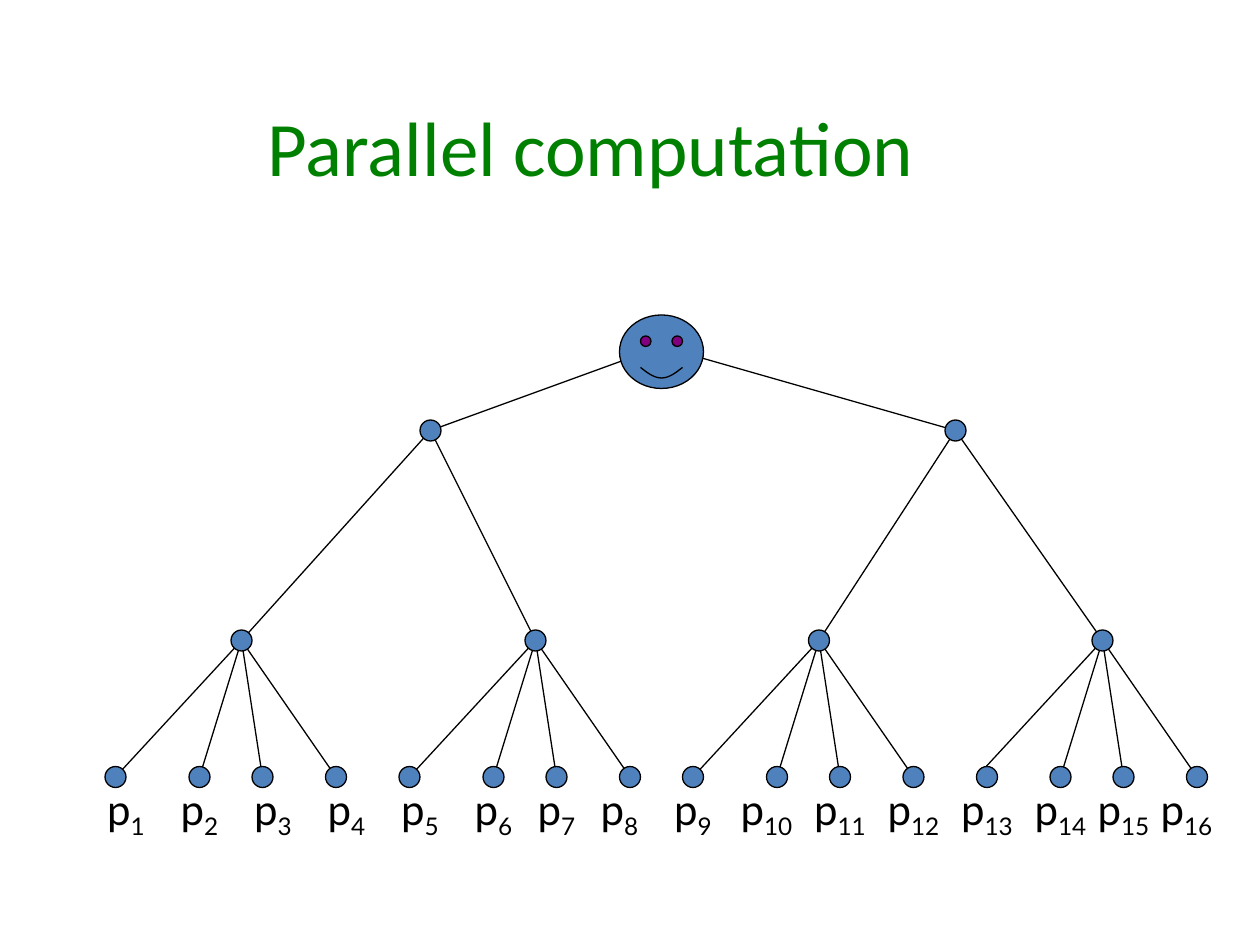
import math
from dataclasses import dataclass

import pptx
import pptx.dml.color
import pptx.enum.shapes
import pptx.enum.text
import pptx.util
from lxml import etree
from pptx.oxml.ns import qn

GRID = 2.54 / 12  # one grid step in cm; tree positions below are in steps


@dataclass(frozen=True)
class Theme:
    title_color: str = "008000"
    node_color: str = "4F81BD"
    eye_color: str = "800080"
    ink: str = "000000"
    title_font: str = "Calibri"
    label_font: str = "Lato"
    title_size: float = 44
    label_size: float = 24
    line_width: float = 0.75


def steps(count):
    return pptx.util.Cm(count * GRID)


def rgb(color):
    return pptx.dml.color.RGBColor.from_string(color)


class TreeSlide:
    def __init__(self, slide, theme):
        self.slide = slide
        self.theme = theme

    def style_run(self, run, font, size, color):
        run.font.name = font
        run.font.size = pptx.util.Pt(size)
        run.font.color.rgb = rgb(color)

    def outline(self, line):
        line.color.rgb = rgb(self.theme.ink)
        line.width = pptx.util.Pt(self.theme.line_width)

    def title(self, text, left, top, width, height):
        title = self.slide.shapes.title
        title.left, title.top = pptx.util.Cm(left), pptx.util.Cm(top)
        title.width, title.height = pptx.util.Cm(width), pptx.util.Cm(height)
        frame = title.text_frame
        frame.text = text
        frame.vertical_anchor = pptx.enum.text.MSO_ANCHOR.MIDDLE
        heading = frame.paragraphs[0]
        heading.alignment = pptx.enum.text.PP_ALIGN.CENTER
        self.style_run(heading.runs[0], self.theme.title_font,
                       self.theme.title_size, self.theme.title_color)

    def label(self, letter, index, center, top):
        width = 6.1 if index < 10 else 7.5
        box = self.slide.shapes.add_textbox(
            steps(center - width / 2), steps(top), steps(width), steps(6))
        frame = box.text_frame
        frame.word_wrap = False
        frame.auto_size = pptx.enum.text.MSO_AUTO_SIZE.SHAPE_TO_FIT_TEXT
        paragraph = frame.paragraphs[0]
        paragraph.text = letter
        paragraph.alignment = pptx.enum.text.PP_ALIGN.CENTER
        subscript = paragraph.add_run()
        subscript.text = str(index)
        for run in paragraph.runs:
            self.style_run(run, self.theme.label_font,
                           self.theme.label_size, self.theme.ink)
        subscript.font._element.set("baseline", "-25000")

    def edge(self, start, end):
        edge = self.slide.shapes.add_connector(
            pptx.enum.shapes.MSO_CONNECTOR.STRAIGHT,
            *(steps(value) for value in (*start, *end)))
        self.outline(edge.line)
        etree.SubElement(edge._element.spPr, qn("a:effectLst"))

    def circle(self, center, width, height, color):
        x, y = center
        circle = self.slide.shapes.add_shape(
            pptx.enum.shapes.MSO_SHAPE.OVAL, steps(x - width / 2),
            steps(y - height / 2), steps(width), steps(height))
        circle.shadow.inherit = False
        circle.fill.solid()
        circle.fill.fore_color.rgb = rgb(color)
        self.outline(circle.line)

    def smile(self, left, top, width, depth, pieces=24):
        curve = [(steps(left + width * i / pieces),
                  steps(top + depth * math.sin(math.pi * i / pieces)))
                 for i in range(pieces + 1)]
        builder = self.slide.shapes.build_freeform(*curve[0], scale=1.0)
        builder.add_line_segments(curve[1:], close=False)
        smile = builder.convert_to_shape()
        smile.shadow.inherit = False
        smile.fill.background()
        self.outline(smile.line)


def main():
    deck = pptx.Presentation()
    deck.slide_width, deck.slide_height = pptx.util.Cm(25.4), pptx.util.Cm(19.05)
    theme = Theme()
    tree = TreeSlide(deck.slides.add_slide(deck.slide_layouts[5]), theme)

    tree.title("Parallel computation", 1.09, 0.91, 21.64, 4.06)

    # Tree levels: root, two branches, four groups of four processors
    root = (63, 33)
    branch_groups = {(41, 41): [(23, 61), (51, 61)],
                     (91, 41): [(78, 61), (105, 61)]}
    leaf_offsets = (-12, -4, 2, 9)
    leaf_y = 74

    edges, nodes = [], []
    for branch, groups in branch_groups.items():
        edges.append((root, branch))
        nodes.append(branch)
        for group in groups:
            leaves = [(group[0] + offset, leaf_y) for offset in leaf_offsets]
            edges.append((branch, group))
            edges += [(group, leaf) for leaf in leaves]
            nodes += [group, *leaves]
    # The 13th processor sits one step right of its edge's end
    nodes[nodes.index((93, leaf_y))] = (94, leaf_y)

    # Processor labels: seven steps apart, six where they are tighter
    center = 12
    for index in range(1, 17):
        tree.label("p", index, center, leaf_y)
        center += 6 if index in (6, 7, 14, 15) else 7

    for start, end in edges:
        tree.edge(start, end)
    for node in nodes:
        tree.circle(node, 2, 2, theme.node_color)

    # Smiling face at the root
    tree.circle((63, 33.5), 8, 7, theme.node_color)
    for eye_x in (61.5, 64.5):
        tree.circle((eye_x, 32.5), 1, 1, theme.eye_color)
    tree.smile(61, 35, 4, 1)

    deck.save("out.pptx")


if __name__ == "__main__":
    main()
